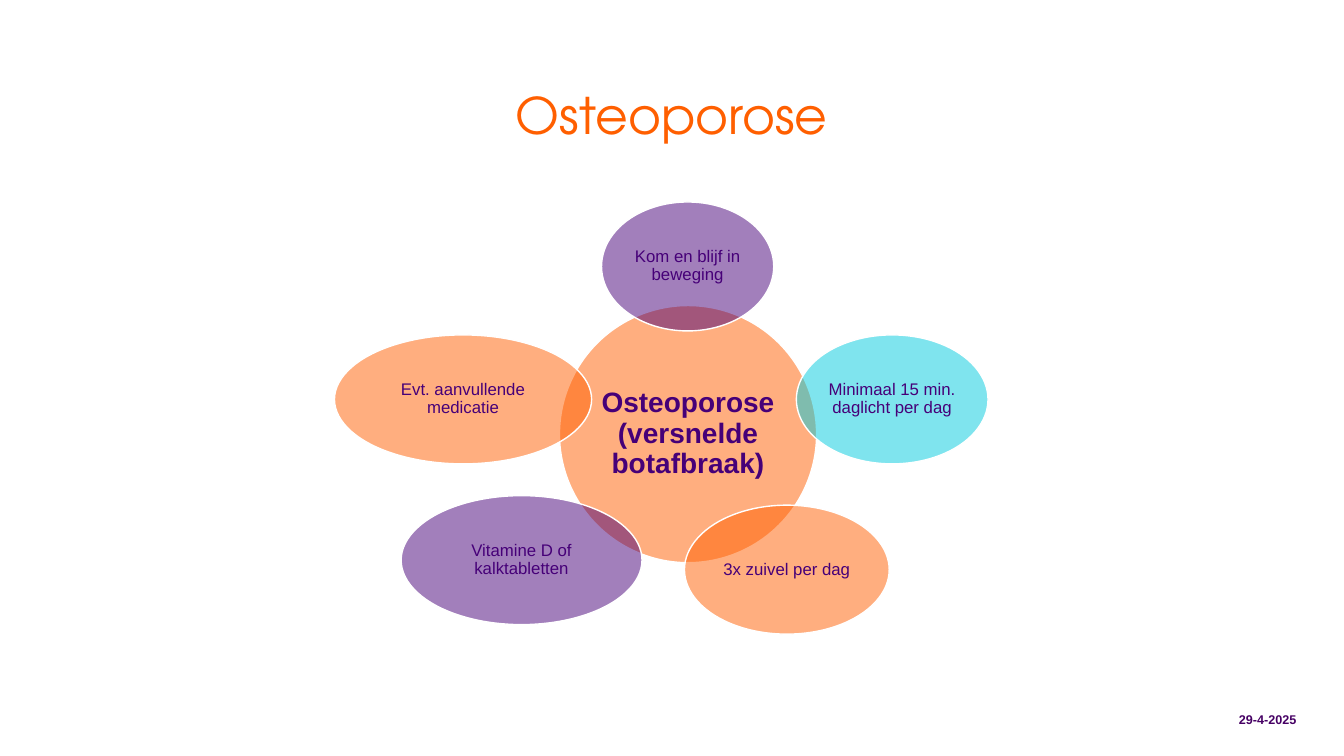
from dataclasses import dataclass

from lxml.etree import SubElement
from pptx import Presentation
from pptx.dml.color import RGBColor
from pptx.enum.shapes import MSO_SHAPE
from pptx.enum.text import MSO_ANCHOR, PP_ALIGN
from pptx.oxml.ns import qn
from pptx.shapes.group import GroupShape
from pptx.text.text import TextFrame
from pptx.util import Cm, Pt

COLORS = {
    "orange": "FF5F00",
    "purple": "460078",
    "cyan": "00CBDE",
    "date": "460064",
    "white": "FFFFFF",
}
BUBBLE_HEIGHT = 3.25


@dataclass
class Bubble:
    text: str
    left: float
    top: float
    width: float
    color: str
    height: float = BUBBLE_HEIGHT
    size: int = 12
    bold: bool = False
    inset: float = 0.04


BUBBLES = [
    Bubble("Osteoporose (versnelde botafbraak)", 14.1, 7.7, 6.48, "orange",
           height=6.48, size=20, bold=True, inset=0.07),
    Bubble("Kom en blijf in beweging", 15.16, 5.09, 4.34, "purple"),
    Bubble("Minimaal 15 min. daglicht per dag", 20.07, 8.44, 4.83, "cyan"),
    Bubble("3x zuivel per dag", 17.25, 12.73, 5.16, "orange"),
    Bubble("Vitamine D of kalktabletten", 10.11, 12.49, 6.07, "purple"),
    Bubble("Evt. aanvullende medicatie", 8.43, 8.44, 6.48, "orange"),
]


def rgb(name: str) -> RGBColor:
    return RGBColor.from_string(COLORS[name])


def write(tf: TextFrame, text: str, *, size: int, color: str,
          font: str = "Arial", bold: bool = False,
          align: PP_ALIGN = PP_ALIGN.CENTER,
          anchor: MSO_ANCHOR = MSO_ANCHOR.MIDDLE,
          spacing: float = 0.9) -> None:
    tf.word_wrap = True
    tf.vertical_anchor = anchor
    p = tf.paragraphs[0]
    p.alignment = align
    p.line_spacing = spacing
    r = p.add_run()
    r.text = text
    r.font.name = font
    r.font.size = Pt(size)
    r.font.bold = bold
    r.font.color.rgb = rgb(color)


def draw_bubble(group: GroupShape, b: Bubble) -> None:
    sp = group.shapes.add_shape(MSO_SHAPE.OVAL, Cm(b.left), Cm(b.top),
                                Cm(b.width), Cm(b.height))
    sp.shadow.inherit = False
    sp.fill.solid()
    sp.fill.fore_color.rgb = rgb(b.color)
    # Half-transparent fill
    fill_color = sp.fill._xPr.find(qn("a:solidFill"))[0]
    SubElement(fill_color, qn("a:alpha"), val="50000")
    sp.line.color.rgb = rgb("white")
    sp.line.width = Pt(1)
    tf = sp.text_frame
    tf.margin_left = tf.margin_right = Cm(b.inset)
    tf.margin_top = tf.margin_bottom = Cm(b.inset)
    write(tf, b.text, size=b.size, color="purple", bold=b.bold)


def main() -> None:
    prs = Presentation()
    prs.slide_width, prs.slide_height = Cm(33.87), Cm(19.05)
    s = prs.slides.add_slide(prs.slide_layouts[6])

    # Title
    title = s.shapes.add_textbox(Cm(3.48), Cm(2.18), Cm(26.9), Cm(1.24))
    write(title.text_frame, "Osteoporose", size=36, color="orange",
          font="TeX Gyre Adventor", anchor=MSO_ANCHOR.TOP)

    # Date
    date = s.shapes.add_textbox(Cm(29.69), Cm(17.63), Cm(3.23), Cm(1.02))
    write(date.text_frame, "29-4-2025", size=9, color="date", bold=True,
          align=PP_ALIGN.RIGHT, spacing=1.0)

    # Radial diagram, centre first
    group = s.shapes.add_group_shape()
    for b in BUBBLES:
        draw_bubble(group, b)

    prs.save("out.pptx")


if __name__ == "__main__":
    main()
